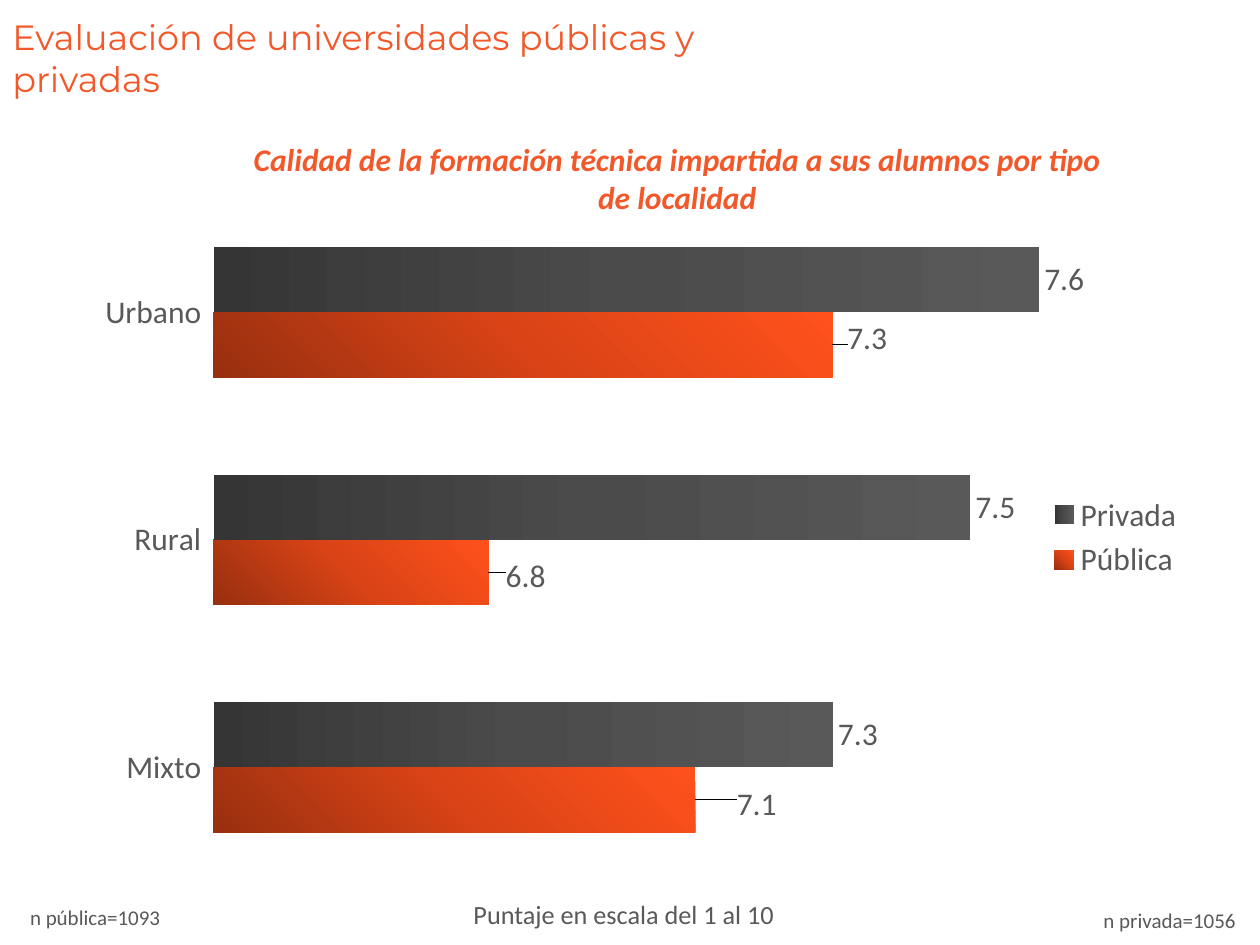
from dataclasses import dataclass, field

from lxml import etree
from pptx import Presentation
from pptx import util as u
from pptx.chart.data import CategoryChartData
from pptx.dml.color import RGBColor
from pptx.enum import chart as charts, text
from pptx.oxml import parse_xml
from pptx.oxml.ns import nsdecls, qn

COLORS = {"accent": "F25829", "body": "595959", "axis": "FFFFFF"}
GRADIENTS = {
    "Pública": (
        ("982F0F", "D94316", "FF511C"),
        '<a:path path="circle"><a:fillToRect t="100000" r="100000"/></a:path>',
    ),
    "Privada": (("353535", "4B4B4B", "595959"), '<a:lin ang="0" scaled="0"/>'),
}
SCORES = {"Pública": (7.1, 6.8, 7.3), "Privada": (7.3, 7.5, 7.6)}
LABEL_SHIFTS = ((0.031, 0.006), (0.01, 0.006), (0.008, -0.009))


def manual_layout(x, y, width=None, height=None, inner=False):
    layout = etree.Element(qn("c:layout"))
    manual = etree.SubElement(layout, qn("c:manualLayout"))
    settings = []
    if inner:
        settings.append(("layoutTarget", "inner"))
    if width is not None:
        settings += [("xMode", "edge"), ("yMode", "edge")]
    settings += [("x", x), ("y", y)]
    if width is not None:
        settings += [("w", width), ("h", height)]
    for name, value in settings:
        etree.SubElement(manual, qn(f"c:{name}")).set("val", str(value))
    return layout


@dataclass
class SlideBuilder:
    page: object
    font: str = "Calibri"
    colors: dict = field(default_factory=lambda: dict(COLORS))

    def style(self, font, size, color="body", name=None):
        font.name = name or self.font
        font.size = u.Pt(size)
        font.color.rgb = RGBColor.from_string(self.colors[color])

    def add_text(self, words, place, size, color="body", name=None,
                 centered=False, emphasis=False):
        box = self.page.shapes.add_textbox(*map(u.Inches, place))
        frame = box.text_frame
        frame.word_wrap = True
        frame.auto_size = text.MSO_AUTO_SIZE.SHAPE_TO_FIT_TEXT
        para = frame.paragraphs[0]
        para.text = words
        if centered:
            para.alignment = text.PP_ALIGN.CENTER
        self.style(para.font, size, color, name)
        if emphasis:
            para.font.bold = para.font.italic = True

    def fill_series(self, series):
        shades, direction = GRADIENTS[series.name]
        stops = "".join(
            f'<a:gs pos="{index * 50000}"><a:srgbClr val="{shade}"/></a:gs>'
            for index, shade in enumerate(shades)
        )
        properties = series._element.get_or_add_spPr()
        properties.insert(0, parse_xml(
            f'<a:gradFill {nsdecls("a")} rotWithShape="1">'
            f"<a:gsLst>{stops}</a:gsLst>{direction}</a:gradFill>"
        ))

    def label_series(self, series):
        labels = series.data_labels
        labels.show_value = True
        labels.position = charts.XL_LABEL_POSITION.OUTSIDE_END
        self.style(labels.font, 18)

    def shift_labels(self, series, shifts):
        for index, shift in enumerate(shifts):
            label = series.points[index].data_label
            self.style(label.font, 18)
            label.position = charts.XL_LABEL_POSITION.OUTSIDE_END
            element = series._element.find(qn("c:dLbls")).findall(qn("c:dLbl"))[index]
            element.find(qn("c:idx")).addnext(manual_layout(*shift))

    def add_bar_chart(self, categories, scores, place):
        data = CategoryChartData()
        data.categories = categories
        for name, values in scores.items():
            data.add_series(name, values)
        chart = self.page.shapes.add_chart(
            charts.XL_CHART_TYPE.BAR_CLUSTERED, *map(u.Inches, place), data
        ).chart
        chart.has_title = False
        self.style(chart.font, 18)

        plot = chart.plots[0]
        plot.gap_width = 150
        plot.overlap = 0
        plot.vary_by_categories = False
        for series in plot.series:
            self.fill_series(series)
            self.label_series(series)
        self.shift_labels(plot.series[0], LABEL_SHIFTS)

        value_axis = chart.value_axis
        value_axis.minimum_scale, value_axis.maximum_scale = 6.4, 7.8
        value_axis.has_major_gridlines = False
        value_axis.visible = False

        category_axis = chart.category_axis
        category_axis.major_tick_mark = charts.XL_TICK_MARK.OUTSIDE
        self.style(category_axis.tick_labels.font, 18)
        line = category_axis.format.line
        line.color.rgb = RGBColor.from_string(self.colors["axis"])
        line.width = u.Pt(0.75)

        chart.has_legend = True
        legend = chart.legend
        legend.position = charts.XL_LEGEND_POSITION.RIGHT
        legend.include_in_layout = False
        self.style(legend.font, 18)
        legend._element.find(qn("c:legendPos")).addnext(
            manual_layout(0.87, 0.43, 0.12, 0.14)
        )

        area = chart._chartSpace.chart.plotArea
        for layout in area.findall(qn("c:layout")):
            area.remove(layout)
        area.insert(0, manual_layout(0.166, 0.008, 0.816, 0.991, inner=True))


def main():
    deck = Presentation()
    deck.slide_width, deck.slide_height = u.Inches(10), u.Inches(7.5)
    builder = SlideBuilder(deck.slides.add_slide(deck.slide_layouts[6]))
    builder.add_bar_chart(("Mixto", "Rural", "Urbano"), SCORES, (0.14, 1.53, 9.37, 5.47))
    builder.add_text("Evaluación de universidades públicas y privadas",
                     (0, 0.07, 5.78, 0.77), 20, "accent", "Montserrat")
    builder.add_text("Puntaje en escala del 1 al 10", (3.66, 7.08, 2.66, 0.35), 15)
    builder.add_text(
        "Calidad de la formación técnica impartida a sus alumnos por tipo de localidad",
        (1.78, 1.06, 7.19, 0.71), 18, "accent", centered=True, emphasis=True)
    builder.add_text("n pública=1093", (0.14, 7.13, 1.27, 0.3), 12)
    builder.add_text("n privada=1056", (8.66, 7.15, 1.27, 0.3), 12)
    deck.save("out.pptx")


if __name__ == "__main__":
    main()
